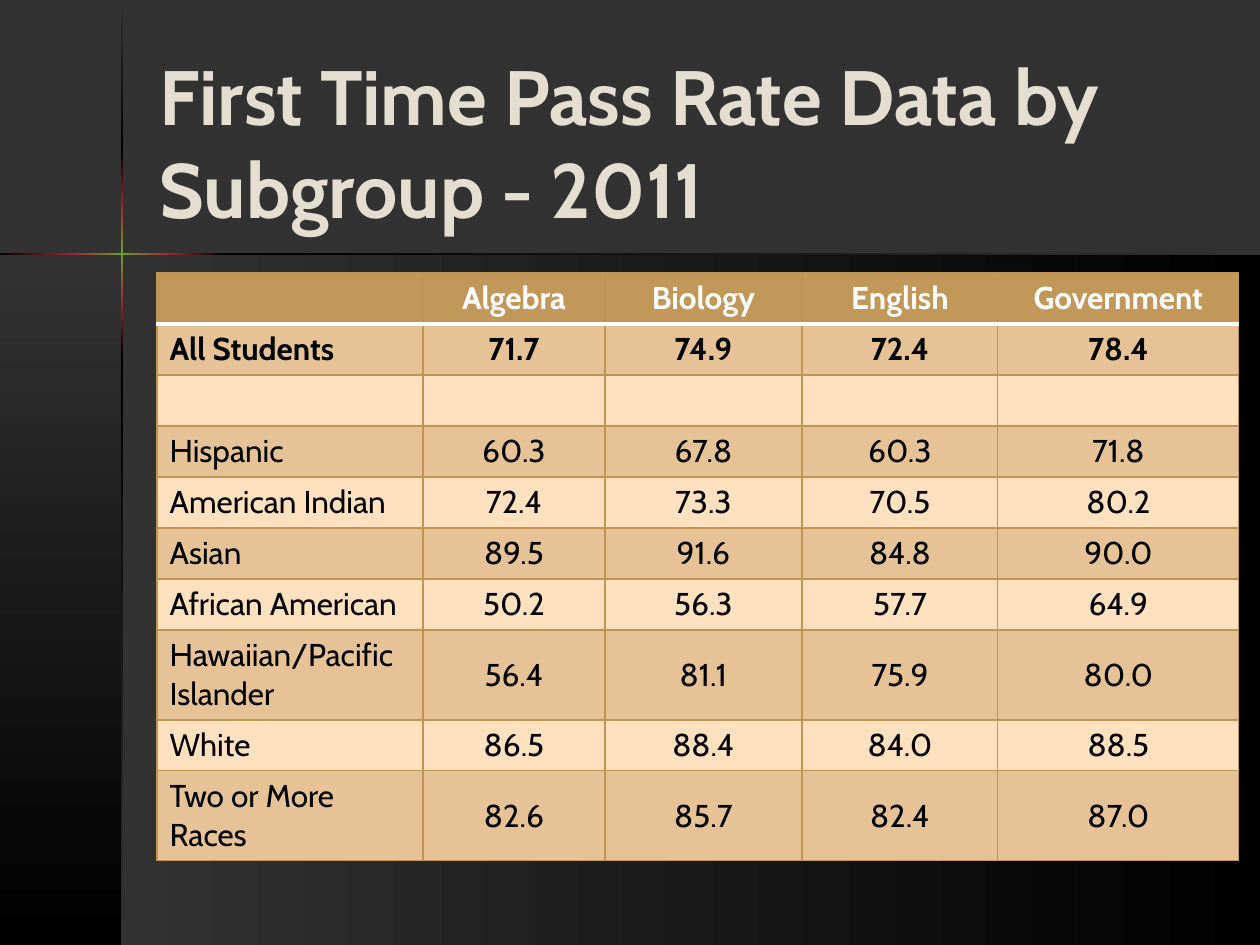
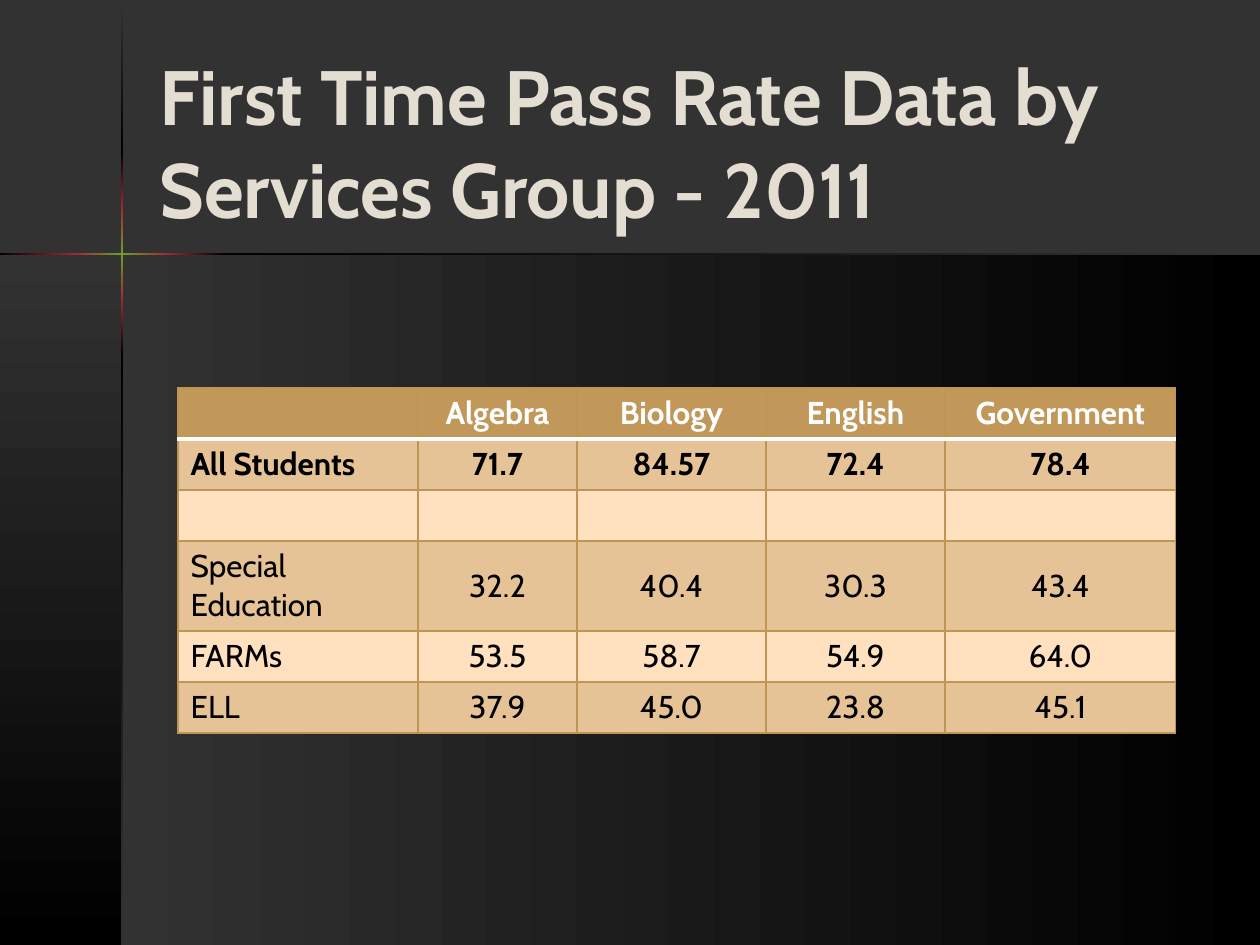
from dataclasses import dataclass
from itertools import pairwise

from lxml.etree import SubElement
from pptx import Presentation
from pptx.dml.color import RGBColor as RGB
from pptx.enum.shapes import MSO_SHAPE as SHAPE
from pptx.enum.text import MSO_ANCHOR as ANCHOR, PP_ALIGN as ALIGN
from pptx.oxml.ns import qn
from pptx.util import Pt

EMU_PER_PX = 914400 / 126
WIDTH, HEIGHT = 1260, 945


@dataclass(frozen=True)
class Theme:
    font: str = "Cabin"
    title_size: int = 44
    table_size: int = 18
    back: str = "323232"
    black: str = "000000"
    red: str = "9F2936"
    green: str = "6B9F25"
    title: str = "E3DED1"
    white: str = "FFFFFF"
    header: str = "C19859"
    band_dark: str = "E6C396"
    band_light: str = "FFE0BF"
    grid: str = "BF9554"
    grid_width: float = 0.75
    rule_width: float = 2


THEME = Theme()
SUBJECTS = ["", "Algebra", "Biology", "English", "Government"]
BLANK_ROW = [""] * len(SUBJECTS)
ROW, TALL_ROW = 51, 90


def px(n):
    return round(n * EMU_PER_PX)


def box(*lengths):
    return [px(n) for n in lengths]


def write(tf, text, size=THEME.table_size, color=THEME.black, bold=False, align=ALIGN.LEFT):
    p = tf.paragraphs[0]
    p.alignment = align
    r = p.add_run()
    r.text = text
    r.font.name = THEME.font
    r.font.size = Pt(size)
    r.font.bold = bold
    r.font.color.rgb = RGB.from_string(color)


def gradient_box(s, x, y, w, h, colors, vertical=False):
    sp = s.shapes.add_shape(SHAPE.RECTANGLE, *box(x, y, w, h))
    sp.shadow.inherit = False
    sp.line.fill.background()
    sp.fill.gradient()
    sp.fill.gradient_angle = 270 if vertical else 0
    stops = sp._element.spPr.find(qn("a:gradFill")).find(qn("a:gsLst"))
    for stop in list(stops):
        stops.remove(stop)
    for i, color in enumerate(colors):
        stop = SubElement(stops, qn("a:gs"), pos=str(100000 * i // (len(colors) - 1)))
        SubElement(stop, qn("a:srgbClr"), val=color)


def add_backdrop(s):
    t = THEME
    s.background.fill.solid()
    s.background.fill.fore_color.rgb = RGB.from_string(t.back)
    fade = [t.back, t.black]
    gradient_box(s, 122, 255, WIDTH - 122, HEIGHT - 255, fade)
    gradient_box(s, 0, 255, 122, HEIGHT - 255, fade, vertical=True)

    beam = [[t.black, t.red], [t.red, t.green, t.red], [t.red, t.black], [t.black, t.back]]
    for (top, bottom), colors in zip(pairwise([1, 152, 208, 300, 355, HEIGHT]), [fade] + beam):
        gradient_box(s, 121, top, 2, bottom - top, colors, vertical=True)
    for (left, right), colors in zip(pairwise([0, 76, 168, 223, WIDTH]), beam):
        gradient_box(s, left, 253, right - left, 2, colors)


def add_title(s, text):
    tf = s.shapes.add_textbox(*box(147, 42, 1040, 198)).text_frame
    tf.word_wrap = True
    tf.vertical_anchor = ANCHOR.MIDDLE
    write(tf, text, size=THEME.title_size, color=THEME.title, bold=True)


def add_border(cell, side, color, width):
    ln = SubElement(cell._tc.get_or_add_tcPr(), qn(f"a:ln{side}"), w=str(Pt(width)))
    fill = SubElement(ln, qn("a:solidFill"))
    SubElement(fill, qn("a:srgbClr"), val=color)


def style_cell(cell, row):
    grid = (THEME.grid, THEME.grid_width)
    rule = (THEME.white, THEME.rule_width)
    borders = {"L": grid, "R": grid,
               "T": rule if row == 1 else grid,
               "B": rule if row == 0 else grid}
    for side, (color, width) in borders.items():
        add_border(cell, side, color, width)
    band = THEME.band_dark if row % 2 else THEME.band_light
    cell.fill.solid()
    cell.fill.fore_color.rgb = RGB.from_string(band if row else THEME.header)


def add_rates(s, x, y, widths, groups, tall=()):
    rows = [SUBJECTS, groups[0], BLANK_ROW, *groups[1:]]
    heights = [TALL_ROW if row[0] in tall else ROW for row in rows]
    frame = s.shapes.add_table(len(rows), len(widths), *box(x, y, sum(widths), sum(heights)))
    table = frame.table
    table.first_row = table.horz_banding = False
    for column, width in zip(table.columns, widths):
        column.width = px(width)
    for i, (values, height) in enumerate(zip(rows, heights)):
        table.rows[i].height = px(height)
        for j, value in enumerate(values):
            cell = table.cell(i, j)
            style_cell(cell, i)
            if j:
                cell.vertical_anchor = ANCHOR.MIDDLE
            if value:
                write(cell.text_frame, value, bold=i < 2,
                      color=THEME.black if i else THEME.white,
                      align=ALIGN.CENTER if j else ALIGN.LEFT)


def add_slide(prs, title):
    s = prs.slides.add_slide(prs.slide_layouts[6])
    add_backdrop(s)
    add_title(s, title)
    return s


def main():
    prs = Presentation()
    prs.slide_width, prs.slide_height = box(WIDTH, HEIGHT)

    s = add_slide(prs, "First Time Pass Rate Data by Subgroup - 2011")
    add_rates(s, 157, 273, [266, 182, 197, 196, 241], [
        ["All Students", "71.7", "74.9", "72.4", "78.4"],
        ["Hispanic", "60.3", "67.8", "60.3", "71.8"],
        ["American Indian", "72.4", "73.3", "70.5", "80.2"],
        ["Asian", "89.5", "91.6", "84.8", "90.0"],
        ["African American", "50.2", "56.3", "57.7", "64.9"],
        ["Hawaiian/Pacific Islander", "56.4", "81.1", "75.9", "80.0"],
        ["White", "86.5", "88.4", "84.0", "88.5"],
        ["Two or More Races", "82.6", "85.7", "82.4", "87.0"],
    ], tall=("Hawaiian/Pacific Islander", "Two or More Races"))

    s = add_slide(prs, "First Time Pass Rate Data by Services Group - 2011")
    add_rates(s, 178, 388, [240, 159, 189, 179, 231], [
        ["All Students", "71.7", "84.57", "72.4", "78.4"],
        ["Special Education", "32.2", "40.4", "30.3", "43.4"],
        ["FARMs", "53.5", "58.7", "54.9", "64.0"],
        ["ELL", "37.9", "45.0", "23.8", "45.1"],
    ], tall=("Special Education",))

    prs.save("out.pptx")


if __name__ == "__main__":
    main()
